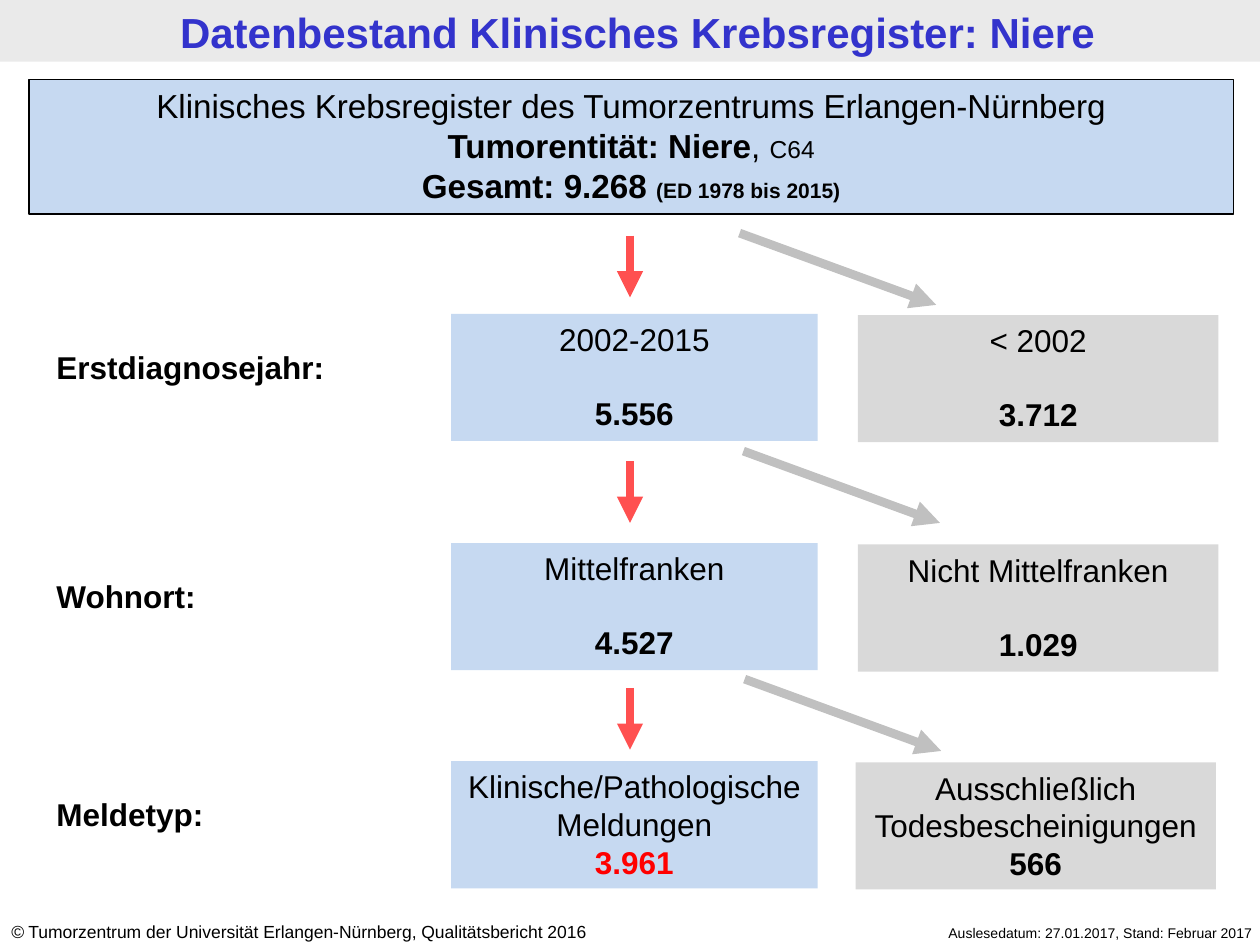
from lxml import etree
from pptx import Presentation
from pptx.dml.color import RGBColor
from pptx.enum import shapes, text
from pptx.oxml.ns import qn
from pptx.util import Inches, Pt

BLACK = RGBColor(0, 0, 0)
BLUE = RGBColor(0xC6, 0xD9, 0xF1)
GREY = RGBColor(0xD9, 0xD9, 0xD9)
BAND = RGBColor(0xEA, 0xEA, 0xEA)
NAVY = RGBColor(0x33, 0x33, 0xCC)
RED = RGBColor(0xFF, 0, 0)
CORAL = RGBColor(0xFF, 0x50, 0x50)
SILVER = RGBColor(0xC0, 0xC0, 0xC0)
LEFT, MID, RIGHT = text.PP_ALIGN.LEFT, text.PP_ALIGN.CENTER, text.PP_ALIGN.RIGHT
LINE = 20.7  # height of one 18 pt text line, in points

TITLE = "Datenbestand Klinisches Krebsregister: Niere"
# Each paragraph is a list of (words, format) runs.
HEAD = [
    [("Klinisches Krebsregister des Tumorzentrums Erlangen-Nürnberg", {"size": 19})],
    [("Tumorentität: Niere", {"size": 19, "bold": True}), (", ", {"size": 19}),
     ("C64", {"size": 14})],
    [("Gesamt: 9.268 ", {"size": 19, "bold": True}),
     ("(ED 1978 bis 2015)", {"size": 12, "bold": True})],
]
# Label, kept group, dropped group, count colour, gap before count
STEPS = [
    ("Erstdiagnosejahr:", ("2002-2015", "5.556"), ("< 2002", "3.712"), BLACK, LINE),
    ("Wohnort:", ("Mittelfranken", "4.527"), ("Nicht Mittelfranken", "1.029"),
     BLACK, LINE),
    ("Meldetyp:", ("Klinische/Pathologische Meldungen", "3.961"),
     ("Ausschließlich Todesbescheinigungen", "566"), RED, 0),
]
# Box top, left of grey box, top of red arrow, start of grey arrow
PLACES = [
    (2.49, 6.81, 1.87, (5.87, 1.85)),
    (4.31, 6.81, 3.66, (5.90, 3.58)),
    (6.04, 6.79, 5.46, (5.91, 5.39)),
]
NOTE = [[("©", {"size": 10, "italic": True}),
         (" Tumorzentrum der Universität Erlangen-Nürnberg, Qualitätsbericht 2016",
          {"size": 10})]]
DATE = [[("Auslesedatum: 27.01.2017, Stand: Februar 2017", {"size": 8})]]


def write(shape, paras, align=LEFT, gap=0, pad=(0.1, 0.05)):
    """Fill a shape with runs; gap is the space before the last paragraph."""
    frame = shape.text_frame
    frame.word_wrap = True
    frame.auto_size = text.MSO_AUTO_SIZE.NONE
    frame.vertical_anchor = text.MSO_ANCHOR.TOP
    frame.margin_left = frame.margin_right = Inches(pad[0])
    frame.margin_top = frame.margin_bottom = Inches(pad[1])
    for i, runs in enumerate(paras):
        para = frame.paragraphs[0] if i == 0 else frame.add_paragraph()
        para.alignment = align
        if gap and i == len(paras) - 1:
            para.space_before = Pt(gap)
        for words, form in runs:
            run = para.add_run()
            run.text = words
            look = {"name": "Arial", "bold": False, **form}
            run.font.color.rgb = look.pop("color", BLACK)
            look["size"] = Pt(look["size"])
            for key, value in look.items():
                setattr(run.font, key, value)


def add_box(slide, at, fill, line=None):
    box = slide.shapes.add_shape(shapes.MSO_SHAPE.RECTANGLE, *map(Inches, at))
    box.shadow.inherit = False
    box.fill.solid()
    box.fill.fore_color.rgb = fill
    if line is None:
        box.line.fill.background()
    else:
        box.line.color.rgb = line
        box.line.width = Pt(0.75)
    return box


def add_text(slide, at, paras, align=LEFT):
    write(slide.shapes.add_textbox(*map(Inches, at)), paras, align)


def add_arrow(slide, start, shift, color):
    end = [a + b for a, b in zip(start, shift)]
    arrow = slide.shapes.add_connector(
        shapes.MSO_CONNECTOR.STRAIGHT, *map(Inches, (*start, *end)))
    arrow.line.color.rgb = color
    arrow.line.width = Pt(5)
    etree.SubElement(arrow.line._get_or_add_ln(), qn("a:tailEnd"), type="triangle")
    etree.SubElement(arrow._element.spPr, qn("a:effectLst"))


def main():
    deck = Presentation()
    deck.slide_width, deck.slide_height = Inches(10), Inches(7.5)
    slide = deck.slides.add_slide(deck.slide_layouts[5])

    band = add_box(slide, (0, 0, 10, 0.49), BAND)
    title = slide.shapes.title
    title.left, title.top, title.width, title.height = map(
        Inches, (0.06, 0.01, 10, 0.49))
    write(title, [[(TITLE, {"size": 24, "bold": True, "color": NAVY})]], MID,
          pad=(0.09, 0.04))
    title._element.addprevious(band._element)

    head = add_box(slide, (0.23, 0.63, 9.56, 1.07), BLUE, BLACK)
    write(head, HEAD, MID, pad=(0.11, 0.05))

    for (label, kept, lost, color, gap), (top, side, drop, turn) in zip(STEPS, PLACES):
        add_text(slide, (0.35, top + 0.22, 2.76, 0.4),
                 [[(label, {"size": 18, "bold": True})]])
        for (name, count), at, fill, tone in (
                (kept, (3.58, top, 2.91, 1.01), BLUE, color),
                (lost, (side, top + 0.01, 2.86, 1.01), GREY, BLACK)):
            write(add_box(slide, at, fill),
                  [[(name, {"size": 18})],
                   [(count, {"size": 18, "bold": True, "color": tone})]], MID, gap)
        add_arrow(slide, (5, drop), (0, 0.49), CORAL)
        add_arrow(slide, turn, (1.56, 0.57), SILVER)

    add_text(slide, (-0.01, 7.26, 5.24, 0.27), NOTE)
    add_text(slide, (6.65, 7.29, 3.39, 0.24), DATE, RIGHT)
    deck.save("out.pptx")


if __name__ == "__main__":
    main()
